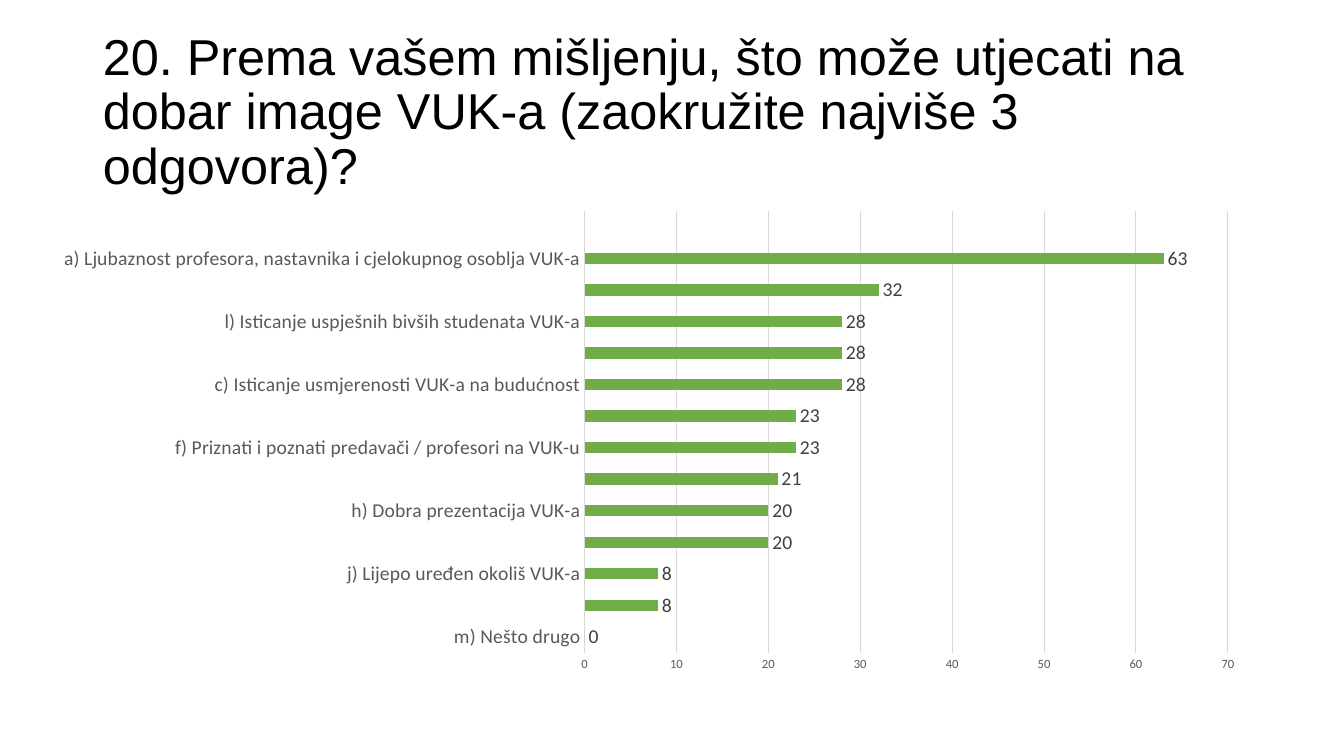
from lxml import etree
from pptx import Presentation
from pptx.chart.data import CategoryChartData
from pptx.dml.color import RGBColor
from pptx.enum.chart import XL_CHART_TYPE, XL_LABEL_POSITION, XL_TICK_MARK
from pptx.enum.text import MSO_ANCHOR, MSO_AUTO_SIZE, PP_ALIGN
from pptx.oxml.ns import qn
from pptx.util import Inches, Pt

BAR = XL_CHART_TYPE.BAR_CLUSTERED
OUTSIDE_END = XL_LABEL_POSITION.OUTSIDE_END
NO_TICK = XL_TICK_MARK.NONE
MIDDLE = MSO_ANCHOR.MIDDLE
NO_FIT = MSO_AUTO_SIZE.NONE
LEFT = PP_ALIGN.LEFT

COLORS = {"title": "000000", "bar": "70AD47", "axis": "595959",
          "grid": "D9D9D9", "value": "404040"}
TITLE = ("20. Prema vašem mišljenju, što može utjecati na dobar image VUK-a "
         "(zaokružite najviše 3 odgovora)?")
ANSWERS = [
    ("m) Nešto drugo", 0),
    ("", 8),
    ("j) Lijepo uređen okoliš VUK-a", 8),
    ("", 20),
    ("h) Dobra prezentacija VUK-a", 20),
    ("", 21),
    ("f) Priznati i poznati predavači / profesori na VUK-u", 23),
    ("", 23),
    ("c) Isticanje usmjerenosti VUK-a na budućnost", 28),
    ("", 28),
    ("l) Isticanje uspješnih bivših studenata VUK-a", 28),
    ("", 32),
    ("a) Ljubaznost profesora, nastavnika i cjelokupnog osoblja VUK-a", 63),
    ("", None),
]
PLOT_SHARES = {"x": 0.45, "y": 0.02, "w": 0.53, "h": 0.92}


def color(name):
    return RGBColor.from_string(COLORS[name])


def style_font(font, size, name, family="Calibri"):
    font.size = Pt(size)
    font.name = family
    font.bold = False
    font.color.rgb = color(name)


def style_line(line):
    line.color.rgb = color("grid")
    line.width = Pt(0.75)


def place_plot(plot_area, shares):
    for old in plot_area.findall(qn("c:layout")):
        plot_area.remove(old)
    layout = etree.Element(qn("c:layout"))
    manual = etree.SubElement(layout, qn("c:manualLayout"))
    settings = [("layoutTarget", "inner"), ("xMode", "edge"), ("yMode", "edge")]
    for tag, value in settings + list(shares.items()):
        etree.SubElement(manual, qn(f"c:{tag}")).set("val", str(value))
    plot_area.insert(0, layout)


def add_title(page, box):
    title = page.shapes.title
    title.left, title.top, title.width, title.height = box
    frame = title.text_frame
    frame.word_wrap = True
    frame.auto_size = NO_FIT
    frame.vertical_anchor = MIDDLE
    para = frame.paragraphs[0]
    para.alignment = LEFT
    para.line_spacing = 0.9
    span = para.add_run()
    span.text = TITLE
    style_font(span.font, 36, "title", "Arial")


def add_answer_chart(page, box):
    data = CategoryChartData()
    data.categories = [answer for answer, count in ANSWERS]
    data.add_series("Series 1", [count for answer, count in ANSWERS])
    chart = page.shapes.add_chart(BAR, *box, data).chart
    chart.has_title = False
    chart.has_legend = False
    style_font(chart.font, 10, "title")
    place_plot(chart.element.chart.plotArea, PLOT_SHARES)

    for axis, size in ((chart.category_axis, 14), (chart.value_axis, 9)):
        axis.major_tick_mark = NO_TICK
        axis.minor_tick_mark = NO_TICK
        style_font(axis.tick_labels.font, size, "axis")
    style_line(chart.category_axis.format.line)
    counts = chart.value_axis
    counts.minimum_scale, counts.maximum_scale, counts.major_unit = 0, 70, 10
    counts.format.line.fill.background()
    style_line(counts.major_gridlines.format.line)

    plot = chart.plots[0]
    plot.gap_width = 182
    plot.vary_by_categories = False
    series = plot.series[0]
    series.format.fill.solid()
    series.format.fill.fore_color.rgb = color("bar")
    labels = series.data_labels
    labels.show_value = True
    labels.position = OUTSIDE_END
    style_font(labels.font, 14, "value")


def main():
    deck = Presentation()
    deck.slide_width, deck.slide_height = Inches(13.33), Inches(7.5)
    page = deck.slides.add_slide(deck.slide_layouts[5])
    add_title(page, [Inches(n) for n in (0.92, 0.4, 11.5, 1.45)])
    add_answer_chart(page, [Inches(n) for n in (0.38, 2, 12.04, 4.76)])
    deck.save("out.pptx")


if __name__ == "__main__":
    main()
